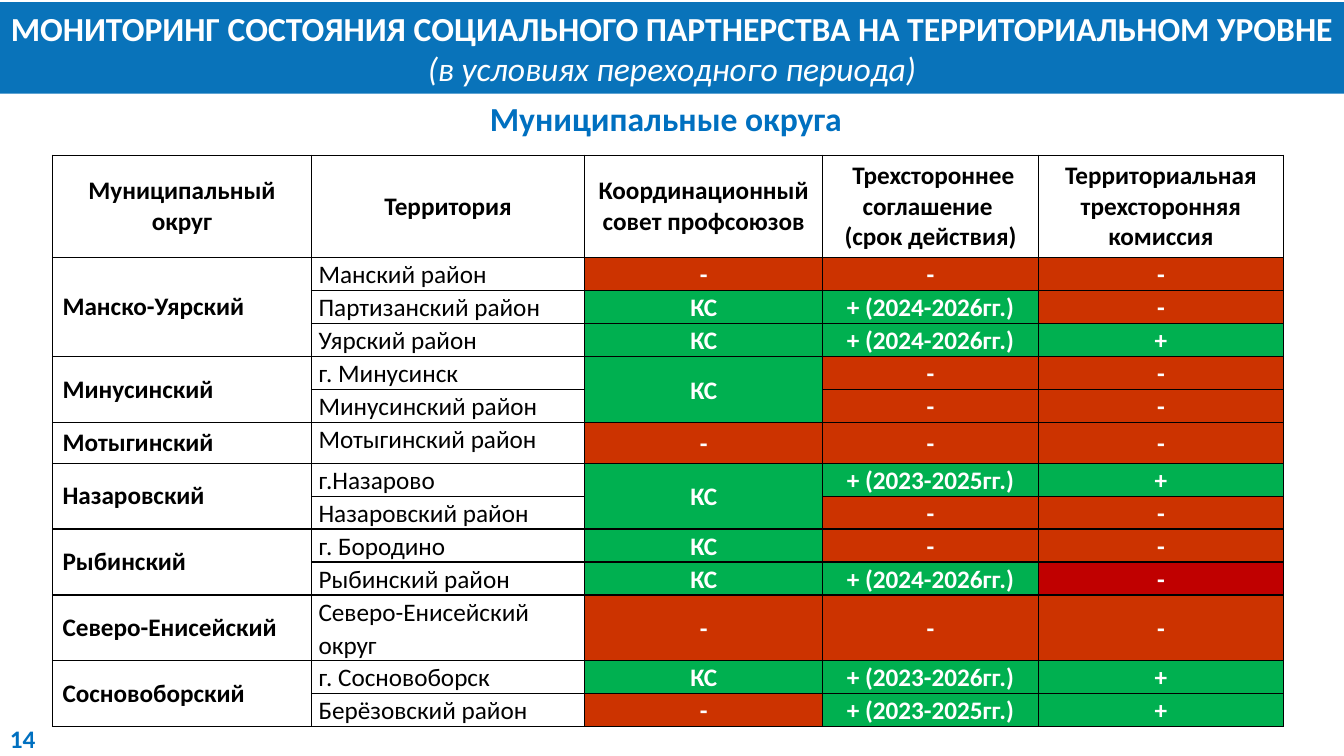
from dataclasses import dataclass

from lxml import etree
from pptx import Presentation
from pptx import util as u
from pptx.dml.color import RGBColor
from pptx.enum import shapes, text
from pptx.oxml import ns

PX = 9144
FONT = "Calibri"
BLACK, WHITE, BLUE, BANNER = "000000", "FFFFFF", "0070C0", "0973BA"
GREEN, RED, DARK_RED = "00B050", "CC3300", "C00000"
COLUMN_WIDTHS = (257, 271, 236, 214, 243)
HEADER_HEIGHT, ROW_HEIGHT = 101, 32
HEADINGS = (
    "Муниципальный округ",
    "Территория",
    "Координационный совет профсоюзов",
    " Трехстороннее соглашение \v(срок действия)",
    "Территориальная трехсторонняя комиссия",
)


@dataclass(frozen=True)
class Territory:
    name: str
    council: str
    agreement: str
    commission: str
    height: int = ROW_HEIGHT
    commission_color: str = ""


@dataclass(frozen=True)
class District:
    name: str
    territories: tuple[Territory, ...]
    shared_council: bool = False


@dataclass(frozen=True)
class Label:
    left: int
    top: int
    width: int
    height: int
    words: str
    size: int
    wrap: bool


DISTRICTS = (
    District("Манско-Уярский", (
        Territory("Манский район", "-", "-", "-"),
        Territory("Партизанский район", "КС", "+ (2024-2026гг.)", "-"),
        Territory("Уярский район", "КС", "+ (2024-2026гг.)", "+"),
    )),
    District("Минусинский", (
        Territory("г. Минусинск", "КС", "-", "-"),
        Territory("Минусинский район", "", "-", "-"),
    ), shared_council=True),
    District("Мотыгинский", (
        Territory("Мотыгинский район", "-", "-", "-", height=40),
    )),
    District("Назаровский", (
        Territory("г.Назарово", "КС", "+ (2023-2025гг.)", "+"),
        Territory("Назаровский район", "", "-", "-"),
    ), shared_council=True),
    District("Рыбинский", (
        Territory("г. Бородино", "КС", "-", "-"),
        Territory("Рыбинский район", "КС", "+ (2024-2026гг.)", "-",
                  commission_color=DARK_RED),
    )),
    District("Северо-Енисейский", (
        Territory("Северо-Енисейский округ", "-", "-", "-", height=65),
    )),
    District("Сосновоборский", (
        Territory("г. Сосновоборск", "КС", "+ (2023-2026гг.)", "+"),
        Territory("Берёзовский район", "-", "+ (2023-2025гг.)", "+"),
    )),
)
LABELS = (
    Label(0, 713, 52, 40, "14", 18, True),
    Label(476, 92, 381, 50, "Муниципальные округа", 24, False),
)


def px(*lengths: int) -> list[u.Emu]:
    return [u.Emu(length * PX) for length in lengths]


def color(value: str) -> RGBColor:
    return RGBColor.from_string(value)


def set_font(font, size: int, value: str, bold: bool) -> None:
    font.name = FONT
    font.size = u.Pt(size)
    font.bold = bold
    font.color.rgb = color(value)


def add_label(page, label: Label) -> None:
    box = page.shapes.add_textbox(*px(label.left, label.top, label.width, label.height))
    frame = box.text_frame
    frame.word_wrap = label.wrap
    frame.auto_size = text.MSO_AUTO_SIZE.SHAPE_TO_FIT_TEXT
    frame.text = label.words
    set_font(frame.paragraphs[0].font, label.size, BLUE, True)


def add_banner(page) -> None:
    banner = page.shapes.add_shape(shapes.MSO_SHAPE.RECTANGLE, *px(0, 2, 1333, 91))
    banner.shadow.inherit = False
    banner.fill.solid()
    banner.fill.fore_color.rgb = color(BANNER)
    banner.line.fill.background()
    frame = banner.text_frame
    frame.word_wrap = True
    para = frame.paragraphs[0]
    para.alignment = text.PP_ALIGN.CENTER
    title = para.add_run()
    title.text = "МОНИТОРИНГ СОСТОЯНИЯ СОЦИАЛЬНОГО ПАРТНЕРСТВА НА ТЕРРИТОРИАЛЬНОМ УРОВНЕ "
    set_font(title.font, 24, WHITE, True)
    note = para.add_run()
    note.text = "(в условиях переходного периода)"
    set_font(note.font, 24, WHITE, False)
    note.font.italic = True


def set_borders(cell) -> None:
    properties = cell._tc.get_or_add_tcPr()
    for side in ("lnL", "lnR", "lnT", "lnB"):
        line = etree.SubElement(properties, ns.qn(f"a:{side}"), w=str(u.Pt(1)))
        fill = etree.SubElement(line, ns.qn("a:solidFill"))
        etree.SubElement(fill, ns.qn("a:srgbClr"), val=BLACK)


def fill_cell(cell, words: str, fill: str = WHITE, bold: bool = True,
              centred: bool = True, tight: bool = True) -> None:
    cell.fill.solid()
    cell.fill.fore_color.rgb = color(fill)
    cell.text = words
    cell.vertical_anchor = text.MSO_ANCHOR.MIDDLE if bold else text.MSO_ANCHOR.TOP
    para = cell.text_frame.paragraphs[0]
    para.alignment = text.PP_ALIGN.CENTER if centred else text.PP_ALIGN.LEFT
    if tight:
        cell.margin_left, cell.margin_right = px(7, 7)
        cell.margin_top = cell.margin_bottom = 0
        para.line_spacing = 1.07
        para.space_after = u.Pt(8)
    set_font(para.font, 18, BLACK if fill == WHITE else WHITE, bold)


def fill_territory(table, row: int, territory: Territory) -> None:
    fill_cell(table.cell(row, 1), territory.name, bold=False, centred=False)
    statuses = (territory.council, territory.agreement, territory.commission)
    for column, status in enumerate(statuses, 2):
        if status:
            fill = RED if status == "-" else GREEN
            if column == 4:
                fill = territory.commission_color or fill
            fill_cell(table.cell(row, column), status, fill)


def add_monitoring_table(page) -> None:
    heights = [HEADER_HEIGHT] + [
        territory.height for district in DISTRICTS for territory in district.territories
    ]
    frame = page.shapes.add_table(
        len(heights), len(COLUMN_WIDTHS), *px(52, 154, sum(COLUMN_WIDTHS), sum(heights)))
    table = frame.table
    table.first_row = table.horz_banding = False
    for column, width in zip(table.columns, px(*COLUMN_WIDTHS)):
        column.width = width
    for row, height in zip(table.rows, px(*heights)):
        row.height = height
    for cell in table.iter_cells():
        set_borders(cell)
    for column, heading in enumerate(HEADINGS):
        fill_cell(table.cell(0, column), heading, tight=False)
    first = 1
    for district in DISTRICTS:
        last = first + len(district.territories) - 1
        for row, territory in enumerate(district.territories, first):
            fill_territory(table, row, territory)
        fill_cell(table.cell(first, 0), district.name, centred=False, tight=False)
        for column in (0, 2) if district.shared_council else (0,):
            if last > first:
                table.cell(first, column).merge(table.cell(last, column))
        first = last + 1


def main() -> None:
    deck = Presentation()
    deck.slide_width, deck.slide_height = px(1333, 750)
    page = deck.slides.add_slide(deck.slide_layouts[6])
    add_monitoring_table(page)
    for label in LABELS:
        add_label(page, label)
    add_banner(page)
    deck.save("out.pptx")


if __name__ == "__main__":
    main()
